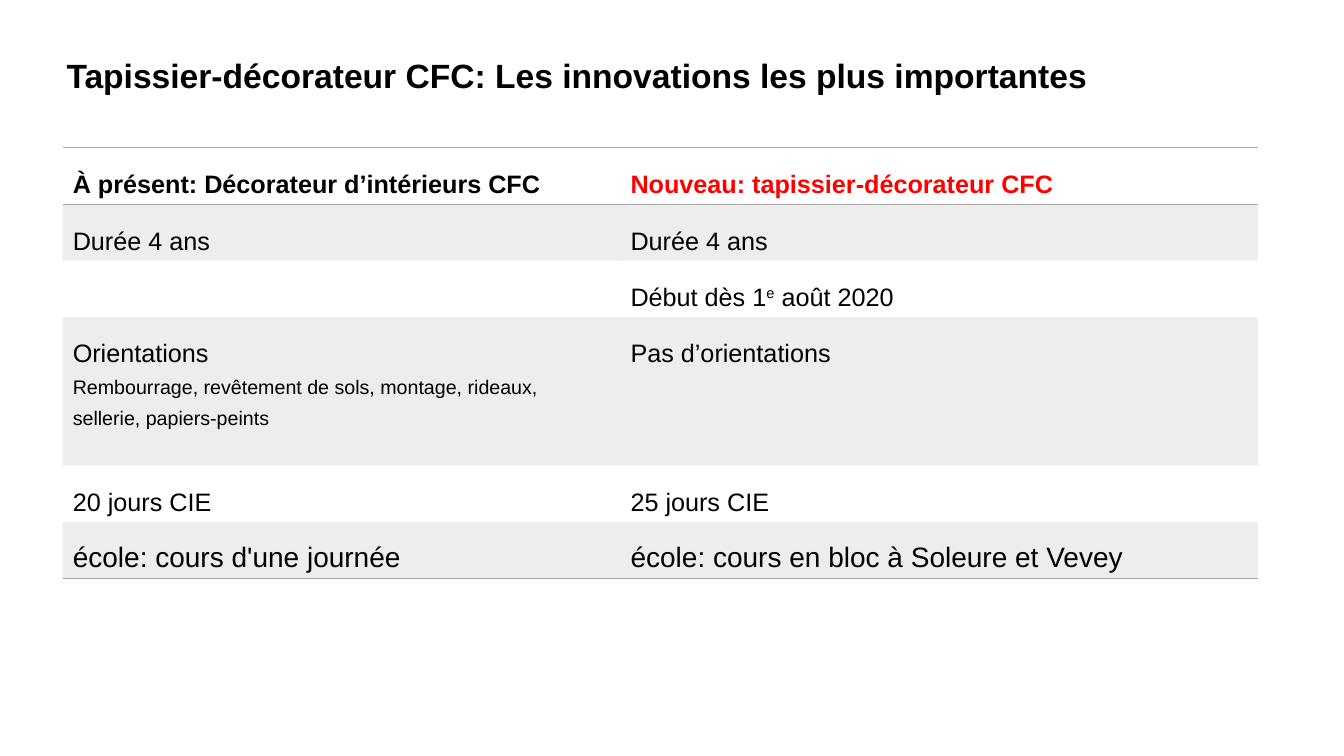
from lxml.etree import SubElement
from pptx import Presentation
from pptx.dml.color import RGBColor
from pptx.enum.text import MSO_ANCHOR, PP_ALIGN
from pptx.oxml import parse_xml
from pptx.oxml.ns import qn, nsdecls
from pptx.util import Pt

BLACK, RED, GREY = "000000", "FF0000", "A5A5A5"
NO_STYLE = "{2D5ABB26-0587-4C30-8999-92F81FD0307C}"
SPECIALTIES = "Rembourrage, revêtement de sols, montage, rideaux, \vsellerie, papiers-peints"

ROWS = [
    ("À présent: Décorateur d’intérieurs CFC", "Nouveau: tapissier-décorateur CFC"),
    ("Durée 4 ans", "Durée 4 ans"),
    ("", "Début dès 1^e^ août 2020"),
    ("Orientations\n" + SPECIALTIES, "Pas d’orientations"),
    ("20 jours CIE", "25 jours CIE"),
    ("école: cours d'une journée", "école: cours en bloc à Soleure et Vevey"),
]
ROW_HEIGHTS = [40.3, 40.3, 40.3, 106.2, 40.3, 40.3]
COLUMN_WIDTHS = [398.4, 455.2]


def color(value):
    return RGBColor.from_string(value)


def write(para, text, size=18, fill=BLACK, bold=False, spacing=Pt(33)):
    para.alignment = PP_ALIGN.LEFT
    para.line_spacing = spacing
    for index, part in enumerate(text.split("^")):
        for number, line in enumerate(part.split("\v")):
            if number:
                para.add_line_break()
            span = para.add_run()
            span.text = line
            span.font.name = "Arial"
            span.font.size = Pt(size)
            span.font.bold = bold
            span.font.color.rgb = color(fill)
            if index % 2:
                span.font._element.set("baseline", "30000")


def shade(cell):
    cell.fill.solid()
    cell.fill.fore_color.rgb = color(GREY)
    tint = cell._tc.tcPr.find(qn("a:solidFill"))[0]
    SubElement(tint, qn("a:alpha")).set("val", "20000")


def rule(cell, side):
    line = parse_xml(
        f'<a:{side} {nsdecls("a")} w="{Pt(1)}"><a:solidFill>'
        f'<a:srgbClr val="{GREY}"/></a:solidFill></a:{side}>'
    )
    cell._tc.get_or_add_tcPr().insert(0, line)


def place_title(page, left, top, width, height):
    title = page.shapes.title
    title.left, title.top = Pt(left), Pt(top)
    title.width, title.height = Pt(width), Pt(height)
    title.text_frame.vertical_anchor = MSO_ANCHOR.MIDDLE
    write(
        title.text_frame.paragraphs[0],
        "Tapissier-décorateur CFC: Les innovations les plus importantes",
        size=24, bold=True, spacing=0.9,
    )


def fill_cell(cell, text, row, column):
    last = len(ROWS) - 1
    frame = cell.text_frame
    heading, *details = text.split("\n")
    if heading:
        write(
            frame.paragraphs[0], heading,
            size=20 if row == last else 18,
            fill=RED if row == 0 and column == 1 else BLACK,
            bold=row == 0,
        )
    for detail in details:
        write(frame.add_paragraph(), detail, size=14, spacing=Pt(22))
    if row % 2:
        shade(cell)
    else:
        cell.fill.background()
    if row in (0, last):
        rule(cell, "lnB")
    if row == 0:
        rule(cell, "lnT")


def place_comparison(page, left, top):
    box = page.shapes.add_table(
        len(ROWS), len(COLUMN_WIDTHS), Pt(left), Pt(top),
        Pt(sum(COLUMN_WIDTHS)), Pt(sum(ROW_HEIGHTS)),
    )
    table = box.table
    table.first_row = table.horz_banding = False
    table._tbl.tblPr.find(qn("a:tableStyleId")).text = NO_STYLE
    for column, width in zip(table.columns, COLUMN_WIDTHS):
        column.width = Pt(width)
    for row, height in zip(table.rows, ROW_HEIGHTS):
        row.height = Pt(height)
    for row, texts in enumerate(ROWS):
        for column, text in enumerate(texts):
            fill_cell(table.cell(row, column), text, row, column)


def main():
    deck = Presentation()
    deck.slide_width, deck.slide_height = Pt(960), Pt(540)
    page = deck.slides.add_slide(deck.slide_layouts[5])
    place_title(page, 40.3, 28.8, 902.2, 53.3)
    place_comparison(page, 44.8, 105.6)
    deck.save("out.pptx")


if __name__ == "__main__":
    main()
